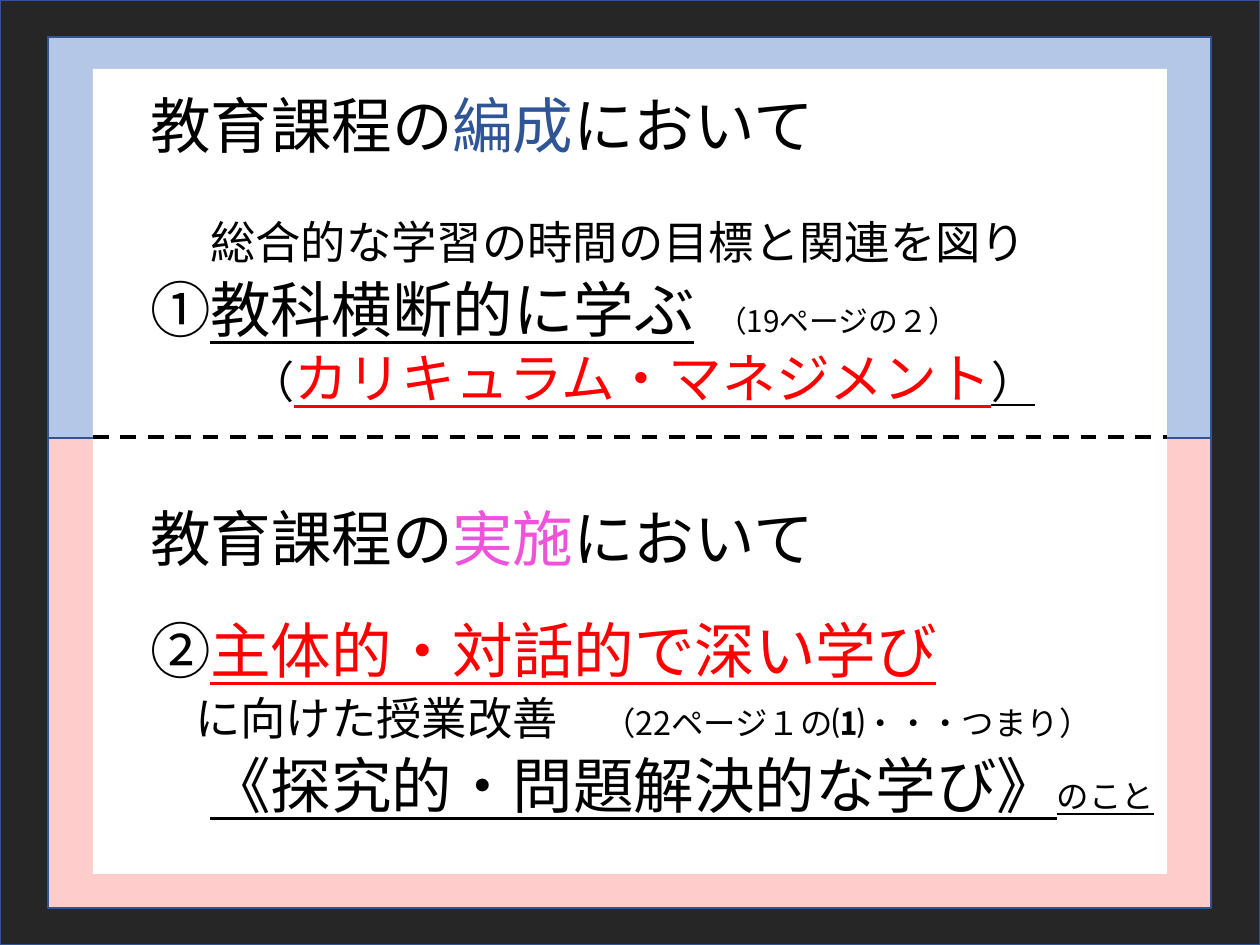
from pptx import Presentation
from pptx.util import Emu, Pt
from pptx.dml.color import RGBColor
from pptx.enum.dml import MSO_LINE_DASH_STYLE as Dash
from pptx.enum.shapes import MSO_CONNECTOR as Connector, MSO_SHAPE as Shape
from pptx.enum.text import MSO_ANCHOR as Anchor
from pptx.oxml.ns import qn
from lxml.etree import SubElement

FONT = "Noto Sans CJK JP"
COLORS = {
    "frame": "262626", "outline": "325491", "blue": "B4C7E7", "pink": "FFCCCC",
    "white": "FFFFFF", "black": "000000", "planning": "2F5597",
    "practice": "EF53DC", "red": "FF0000",
}
LARGE, MEDIUM, SMALL = 34.6, 25.9, 18.5
LINE_HEIGHT = 56
NOTE_TAB = 603


def px(count):
    return Emu(round(count * 914400 / 126))


def color(name):
    return RGBColor.from_string(COLORS[name])


def set_all(target, values):
    for name, value in values.items():
        setattr(target, name, value)


def span(text, size, tint="black", **marks):
    return text, size, tint, marks


PLANNING = [
    (0, 0, [span("教育課程の", LARGE), span("編成", LARGE, "planning"),
            span("において", LARGE)]),
    (60, 52, [span("総合的な学習の時間の目標と関連を図り", MEDIUM)]),
    (0, 20, [span("①", LARGE), span("教科横断的に学ぶ", LARGE, underline=True),
             span("\t（19ページの２）", 17)]),
    (100, 8, [span("（", 25.2),
              span("カリキュラム・マネジメント", 30.7, "red", underline=True),
              span("）", 25.2, underline=True)]),
]
PRACTICE = [
    (0, 109, [span("教育課程の", LARGE), span("実施", LARGE, "practice"),
              span("において", LARGE)]),
    (0, 56, [span("②", LARGE),
             span("主体的・対話的で深い学び", LARGE, "red", underline=True)]),
    (45, 3, [span("に向けた授業改善　", MEDIUM), span("（22ページ１の", SMALL),
             span("⑴", SMALL, bold=True), span("・・・つまり）", SMALL)]),
    (60, 20, [span("《探究的・問題解決的な学び》", LARGE, underline=True),
              span("のこと", SMALL, underline=True)]),
]


def add_panel(page, left, top, width, height, fill, outlined=True):
    panel = page.shapes.add_shape(
        Shape.RECTANGLE, px(left), px(top), px(width), px(height))
    panel.shadow.inherit = False
    panel.fill.solid()
    panel.fill.fore_color.rgb = color(fill)
    if outlined:
        panel.line.color.rgb = color("outline")
        panel.line.width = Pt(1)
    else:
        panel.line.fill.background()


def add_backdrop(page, left, top, width, height):
    add_panel(page, left, top, width, height, "frame")
    add_panel(page, left + 48, top + 437, width - 97, 471, "pink")
    add_panel(page, left + 48, top + 37, width - 97, 401, "blue")
    add_panel(page, left + 93, top + 69, width - 186, 805, "white", outlined=False)


def add_paragraph(para, indent, gap, spans):
    set_all(para, {"line_spacing": px(LINE_HEIGHT), "space_before": px(gap),
                   "space_after": Pt(0)})
    props = para._p.get_or_add_pPr()
    props.set("marL", str(px(indent)))
    props.set("indent", "0")
    if any("\t" in text for text, *_ in spans):
        stops = SubElement(props, qn("a:tabLst"))
        SubElement(stops, qn("a:tab"), pos=str(px(NOTE_TAB)), algn="l")
    for text, size, tint, marks in spans:
        run = para.add_run()
        run.text = text
        set_all(run.font, {"name": FONT, "size": Pt(size), **marks})
        run.font.color.rgb = color(tint)
        SubElement(run._r.get_or_add_rPr(), qn("a:ea"), typeface=FONT)


def add_outline(page, left, top, width, height):
    box = page.shapes.add_textbox(px(left), px(top), px(width), px(height))
    frame = box.text_frame
    set_all(frame, {"word_wrap": True, "vertical_anchor": Anchor.TOP,
                    "margin_left": px(13), "margin_right": px(0),
                    "margin_top": px(100), "margin_bottom": px(0)})
    for number, line in enumerate(PLANNING + PRACTICE):
        para = frame.add_paragraph() if number else frame.paragraphs[0]
        add_paragraph(para, *line)


def add_divider(page, left, top, width):
    divider = page.shapes.add_connector(
        Connector.STRAIGHT, px(left), px(top), px(left + width), px(top))
    divider.line.color.rgb = color("black")
    set_all(divider.line, {"width": Pt(2.25), "dash_style": Dash.DASH})
    SubElement(divider._element.spPr, qn("a:effectLst"))


def main():
    deck = Presentation()
    set_all(deck, {"slide_width": px(1260), "slide_height": px(945)})
    page = deck.slides.add_slide(deck.slide_layouts[6])
    add_backdrop(page, 0, 0, 1260, 945)
    add_outline(page, 137, 5, 1041, 825)
    add_divider(page, 93, 437, 1074)
    deck.save("out.pptx")


if __name__ == "__main__":
    main()
